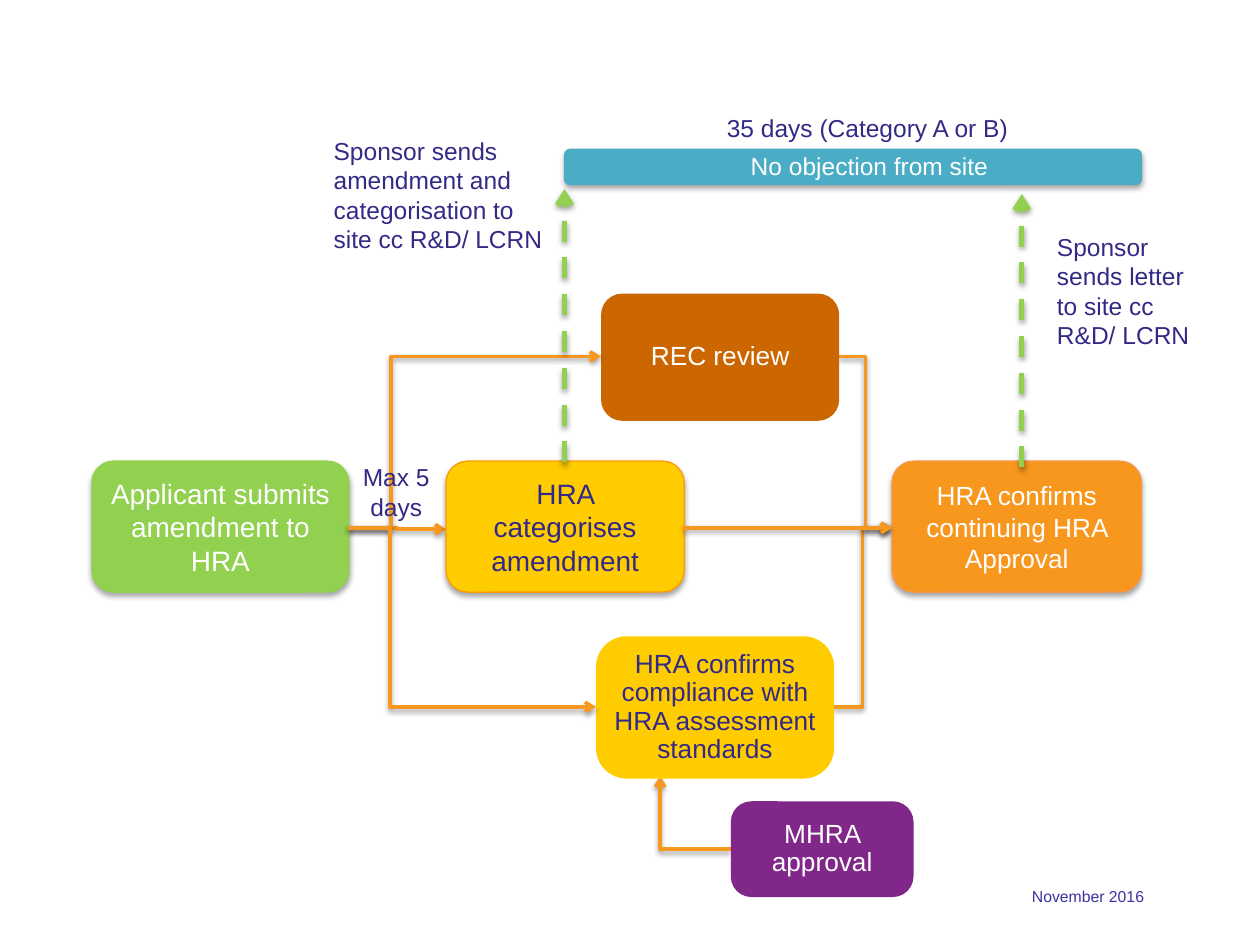
from dataclasses import dataclass
from typing import Optional

from lxml import etree
from pptx import Presentation
from pptx import util as u
from pptx.dml.color import RGBColor
from pptx.enum import dml, shapes, text
from pptx.oxml.ns import qn

NAVY = RGBColor(0x33, 0x2A, 0x86)
FOOTER_BLUE = RGBColor(0x3C, 0x32, 0xA0)
WHITE = RGBColor(0xFF, 0xFF, 0xFF)
GREEN = RGBColor(0x92, 0xD0, 0x50)
YELLOW = RGBColor(0xFF, 0xCC, 0x00)
AMBER = RGBColor(0xFF, 0x99, 0x00)
ORANGE = RGBColor(0xF8, 0x97, 0x1D)
ORANGE_EDGE = RGBColor(0xF7, 0x96, 0x46)
BROWN = RGBColor(0xCC, 0x66, 0x00)
PURPLE = RGBColor(0x80, 0x27, 0x89)
TEAL = RGBColor(0x4B, 0xAC, 0xC6)

# The slide is a grid of 100 columns by 75 rows of square cells.
COLUMNS, ROWS = 100, 75
CELL = u.Inches(0.1)
ROUNDED = shapes.MSO_SHAPE.ROUNDED_RECTANGLE
PROCESS = shapes.MSO_SHAPE.FLOWCHART_ALTERNATE_PROCESS

MAIN_ROW = 41.9
REVIEW_ROW = 28.3
ASSESSMENT_ROW = 56.1
SUBMIT_RIGHT = 27.6
CONFIRM_LEFT = 70.8


@dataclass(frozen=True)
class Area:
    column: float
    row: float
    columns: float
    rows: float


@dataclass(frozen=True)
class Step:
    area: Area
    words: str
    fill: RGBColor
    edge: Optional[RGBColor] = None  # an edged step also has a shadow
    ink: RGBColor = WHITE
    size: int = 15
    preset: shapes.MSO_SHAPE = ROUNDED
    corner: Optional[float] = None


@dataclass(frozen=True)
class Label:
    area: Area
    words: str
    ink: RGBColor = NAVY
    size: int = 14
    align: text.PP_ALIGN = text.PP_ALIGN.LEFT


@dataclass(frozen=True)
class Arrow:
    start: tuple[float, float]
    end: tuple[float, float]
    bend: float = 0.5  # share of the width at which an elbow turns
    single_turn: bool = False
    dashed: bool = False


INCOMING_ARROWS = [
    Arrow((SUBMIT_RIGHT, MAIN_ROW), (35.4, 42)),
    Arrow((66.1, ASSESSMENT_ROW), (CONFIRM_LEFT, MAIN_ROW)),
    Arrow((66.6, REVIEW_ROW), (CONFIRM_LEFT, MAIN_ROW)),
    Arrow((58, 67.4), (52.4, 61.6), single_turn=True),
]
STEPS = [
    Step(Area(58, 63.6, 14.5, 7.6), "MHRA approval", PURPLE, corner=0.215),
    Step(Area(35.4, 36.6, 18.9, 10.4), "HRA categorises amendment",
         YELLOW, AMBER, NAVY, 16),
    Step(Area(47.7, 23.3, 18.9, 10.1), "REC review", BROWN, preset=PROCESS),
    Step(Area(47.3, 50.5, 18.9, 11.3),
         "HRA confirms compliance with HRA assessment standards",
         YELLOW, ink=NAVY, corner=0.215),
    Step(Area(7.3, 36.6, 20.4, 10.4), "Applicant submits amendment to HRA",
         GREEN, GREEN, size=16),
    Step(Area(70.8, 36.6, 19.8, 10.4), "HRA confirms continuing HRA Approval",
         ORANGE, ORANGE_EDGE),
    Step(Area(44.8, 11.85, 45.8, 2.8), "", TEAL, TEAL),
]
OUTGOING_ARROWS = [
    Arrow((SUBMIT_RIGHT, MAIN_ROW), (47.7, REVIEW_ROW), bend=0.17),
    Arrow((SUBMIT_RIGHT, MAIN_ROW), (47.3, ASSESSMENT_ROW), bend=0.17),
    Arrow((54.2, MAIN_ROW), (CONFIRM_LEFT, MAIN_ROW)),
    Arrow((44.8, 36.7), (44.8, 15), dashed=True),
    Arrow((81.1, 37.1), (81.1, 15.4), dashed=True),
]
LABELS = [
    Label(Area(25.5, 10.3, 19.7, 10.7),
          "Sponsor sends amendment and categorisation to site cc R&D/ LCRN"),
    Label(Area(56.7, 8.5, 26.2, 3.4), "35 days (Category A or B)"),
    Label(Area(58.6, 11.5, 21, 3.4), "No objection from site", WHITE),
    Label(Area(27.6, 36.2, 7.7, 5.7), "Max 5 days", align=text.PP_ALIGN.CENTER),
    Label(Area(82.9, 17.9, 12.5, 12.8),
          "Sponsor sends letter to site cc R&D/ LCRN"),
    Label(Area(76.3, 69.9, 20.1, 4), "November 2016", FOOTER_BLUE, 9,
          text.PP_ALIGN.CENTER),
]


def cells(*counts: float) -> list[int]:
    return [round(count * CELL) for count in counts]


def place(area: Area) -> list[int]:
    return cells(area.column, area.row, area.columns, area.rows)


def add_shadow(properties, distance: int, opacity: int) -> None:
    """Cast a soft black shadow downwards; opacity is a percentage."""
    effects = properties.find(qn("a:effectLst"))
    if effects is None:
        effects = etree.SubElement(properties, qn("a:effectLst"))
    shadow = etree.SubElement(effects, qn("a:outerShdw"), blurRad="40000",
                              dist=str(distance), dir="5400000", rotWithShape="0")
    color = etree.SubElement(shadow, qn("a:srgbClr"), val="000000")
    etree.SubElement(color, qn("a:alpha"), val=str(opacity * 1000))


def write(frame, words: str, ink: RGBColor, size: int, align: text.PP_ALIGN):
    frame.word_wrap = True
    paragraph = frame.paragraphs[0]
    paragraph.text = words
    paragraph.alignment = align
    paragraph.font.name = "Arial"
    paragraph.font.size = u.Pt(size)
    paragraph.font.color.rgb = ink
    return paragraph


def draw_step(slide, step: Step) -> None:
    shape = slide.shapes.add_shape(step.preset, *place(step.area))
    shape.shadow.inherit = False
    shape.fill.solid()
    shape.fill.fore_color.rgb = step.fill
    if step.corner:
        shape.adjustments[0] = step.corner
    if step.edge:
        shape.line.color.rgb = step.edge
        shape.line.width = u.Pt(0.75)
        add_shadow(shape._element.spPr, 23000, 35)
    else:
        shape.line.fill.background()
    if not step.words:
        return
    frame = shape.text_frame
    frame.vertical_anchor = text.MSO_ANCHOR.MIDDLE
    paragraph = write(frame, step.words, step.ink, step.size, text.PP_ALIGN.CENTER)
    if not step.edge:
        paragraph.line_spacing = 0.9
        frame.margin_left = frame.margin_right = u.Inches(0.07)
        frame.margin_top = frame.margin_bottom = u.Inches(0.07)


def draw_label(slide, label: Label) -> None:
    box = slide.shapes.add_textbox(*place(label.area))
    write(box.text_frame, label.words, label.ink, label.size, label.align)


def draw_arrow(slide, arrow: Arrow) -> None:
    straight = arrow.start[0] == arrow.end[0] or arrow.start[1] == arrow.end[1]
    kind = shapes.MSO_CONNECTOR.STRAIGHT if straight else shapes.MSO_CONNECTOR.ELBOW
    connector = slide.shapes.add_connector(kind, *cells(*arrow.start, *arrow.end))
    connector.line.color.rgb = GREEN if arrow.dashed else ORANGE
    connector.line.width = u.Pt(3 if arrow.dashed else 2)
    if arrow.dashed:
        connector.line.dash_style = dml.MSO_LINE.DASH
    properties = connector._element.spPr
    geometry = properties.find(qn("a:prstGeom"))
    if arrow.single_turn:
        geometry.set("prst", "bentConnector2")
    elif not straight:
        etree.SubElement(geometry.find(qn("a:avLst")), qn("a:gd"), name="adj1",
                         fmla=f"val {round(arrow.bend * 100000)}")
    etree.SubElement(properties.find(qn("a:ln")), qn("a:tailEnd"), type="arrow")
    add_shadow(properties, 20000, 38)


def main() -> None:
    presentation = Presentation()
    presentation.slide_width = COLUMNS * CELL
    presentation.slide_height = ROWS * CELL
    slide = presentation.slides.add_slide(presentation.slide_layouts[6])
    for arrow in INCOMING_ARROWS:
        draw_arrow(slide, arrow)
    for step in STEPS:
        draw_step(slide, step)
    for arrow in OUTGOING_ARROWS:
        draw_arrow(slide, arrow)
    for label in LABELS:
        draw_label(slide, label)
    presentation.save("out.pptx")


if __name__ == "__main__":
    main()
